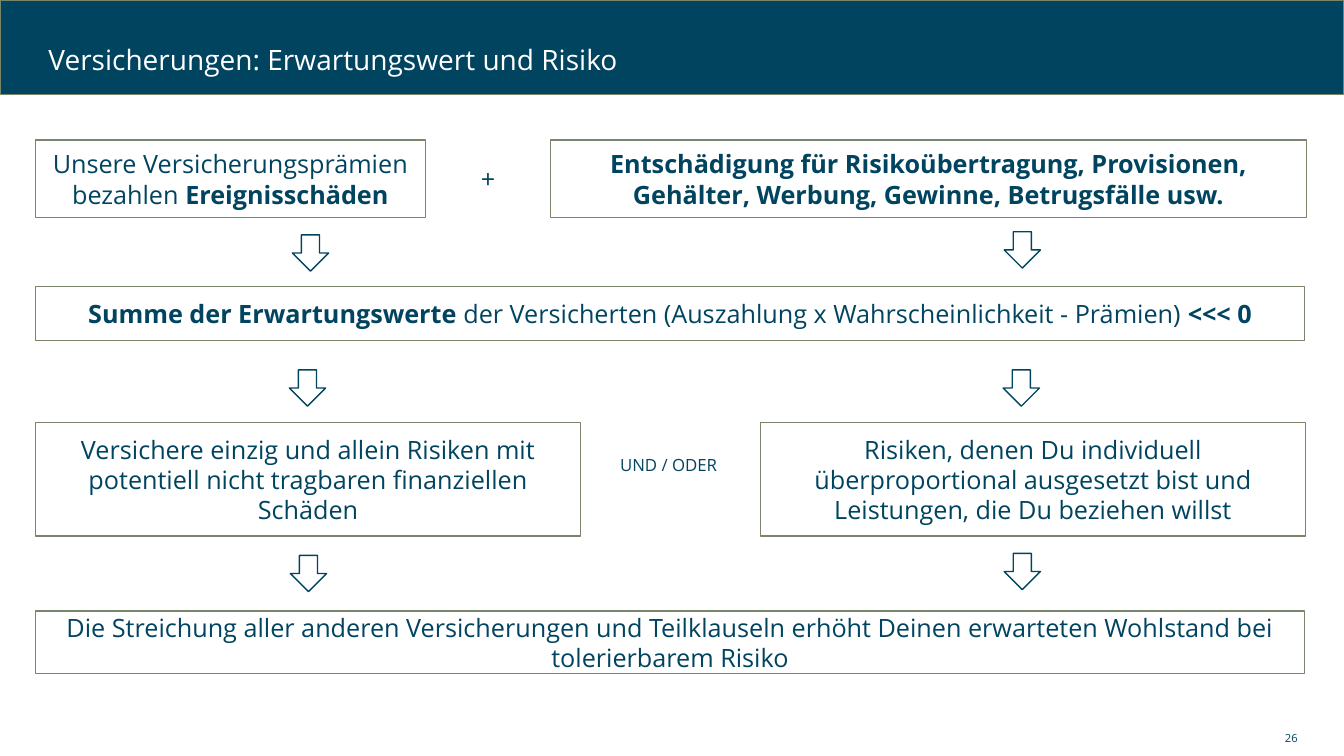
from lxml import etree
from pptx import Presentation
from pptx.dml.color import RGBColor
from pptx.enum.shapes import MSO_SHAPE
from pptx.enum.text import MSO_ANCHOR, MSO_AUTO_SIZE, PP_ALIGN
from pptx.oxml.ns import qn
from pptx.util import Pt

PX = 9144  # 100 px to the inch
FONT = "Open Sans"
NAVY = RGBColor(0x00, 0x44, 0x60)
OLIVE = RGBColor(0x7A, 0x86, 0x6C)
WHITE = RGBColor(0xFF, 0xFF, 0xFF)
RECT, DOWN_ARROW = MSO_SHAPE.RECTANGLE, MSO_SHAPE.DOWN_ARROW
LEFT, CENTER, RIGHT = PP_ALIGN.LEFT, PP_ALIGN.CENTER, PP_ALIGN.RIGHT
TOP, MIDDLE = MSO_ANCHOR.TOP, MSO_ANCHOR.MIDDLE
NO_FIT = MSO_AUTO_SIZE.NONE


def write(shape, text, size=18, color=NAVY, align=CENTER, anchor=MIDDLE,
          wrap=True, spacing=None):
    """Fill a shape with one paragraph; parts between ** are bold."""
    tf = shape.text_frame
    tf.word_wrap = wrap
    tf.auto_size = NO_FIT
    tf.vertical_anchor = anchor
    p = tf.paragraphs[0]
    p.alignment = align
    p.space_before = Pt(0)
    if spacing:
        p.line_spacing = spacing
    for i, part in enumerate(text.split("**")):
        if part:
            r = p.add_run()
            r.text = part
            r.font.name = FONT
            r.font.size = Pt(size)
            r.font.bold = i % 2 == 1
            r.font.color.rgb = color
    return p


def add_box(s, kind, x, y, w, h, line=OLIVE, fill=None):
    sp = s.shapes.add_shape(kind, x * PX, y * PX, w * PX, h * PX)
    sp.shadow.inherit = False
    if fill is None:
        sp.fill.background()
    else:
        sp.fill.solid()
        sp.fill.fore_color.rgb = fill
    sp.line.color.rgb = line
    sp.line.width = Pt(1)
    return sp


def add_label(s, text, x, y, w, h, **fmt):
    write(s.shapes.add_textbox(x * PX, y * PX, w * PX, h * PX), text, **fmt)


def place(sp, x, y, w, h):
    sp.left, sp.top, sp.width, sp.height = x * PX, y * PX, w * PX, h * PX


def remove_bullet(p):
    pPr = p._p.get_or_add_pPr()
    pPr.set("marL", "0")
    pPr.set("indent", "0")
    etree.SubElement(pPr, qn("a:buNone"))


def main():
    prs = Presentation()
    prs.slide_width, prs.slide_height = 1333 * PX, 750 * PX
    s = prs.slides.add_slide(prs.slide_layouts[1])
    title, body = s.placeholders

    # Header band behind the title
    band = add_box(s, RECT, 0, 0, 1333, 94, fill=NAVY)
    title.element.addprevious(band.element)
    place(title, 38, 34, 1102, 54)
    write(title, "Versicherungen: Erwartungswert und Risiko", size=20,
          color=WHITE, align=LEFT, spacing=0.9)

    # Statement boxes
    statements = [
        (35, 139, 387, 77,
         "Unsere Versicherungsprämien bezahlen **Ereignisschäden**"),
        (546, 139, 750, 77,
         "**Entschädigung für Risikoübertragung, Provisionen, Gehälter, "
         "Werbung, Gewinne, Betrugsfälle usw.**"),
        (35, 284, 1259, 54,
         "**Summe der Erwartungswerte **der Versicherten (Auszahlung x "
         "Wahrscheinlichkeit - Prämien) **<<< 0**"),
        (35, 419, 541, 113,
         "Versichere einzig und allein Risiken mit potentiell nicht "
         "tragbaren finanziellen Schäden"),
        (754, 419, 541, 113,
         "Risiken, denen Du individuell überproportional ausgesetzt bist "
         "und Leistungen, die Du beziehen willst"),
        (35, 606, 1259, 62,
         "Die Streichung aller anderen Versicherungen und Teilklauseln "
         "erhöht Deinen erwarteten Wohlstand bei tolerierbarem Risiko"),
    ]
    for x, y, w, h, text in statements:
        write(add_box(s, RECT, x, y, w, h), text)

    # Arrows between the rows
    for x, y in [(290, 233), (996, 230), (287, 367), (995, 367),
                 (288, 551), (996, 549)]:
        add_box(s, DOWN_ARROW, x, y, 36, 36, line=NAVY)

    # Links between neighbouring boxes
    add_label(s, "+", 467, 157, 35, 40, align=LEFT, anchor=TOP, wrap=False)
    place(body, 605, 448, 120, 40)
    remove_bullet(write(body, "UND / ODER", size=12, align=LEFT, anchor=TOP,
                        spacing=0.9))

    # Page number
    add_label(s, "26", 942, 720, 355, 24, size=8, align=RIGHT)

    prs.save("out.pptx")


if __name__ == "__main__":
    main()
